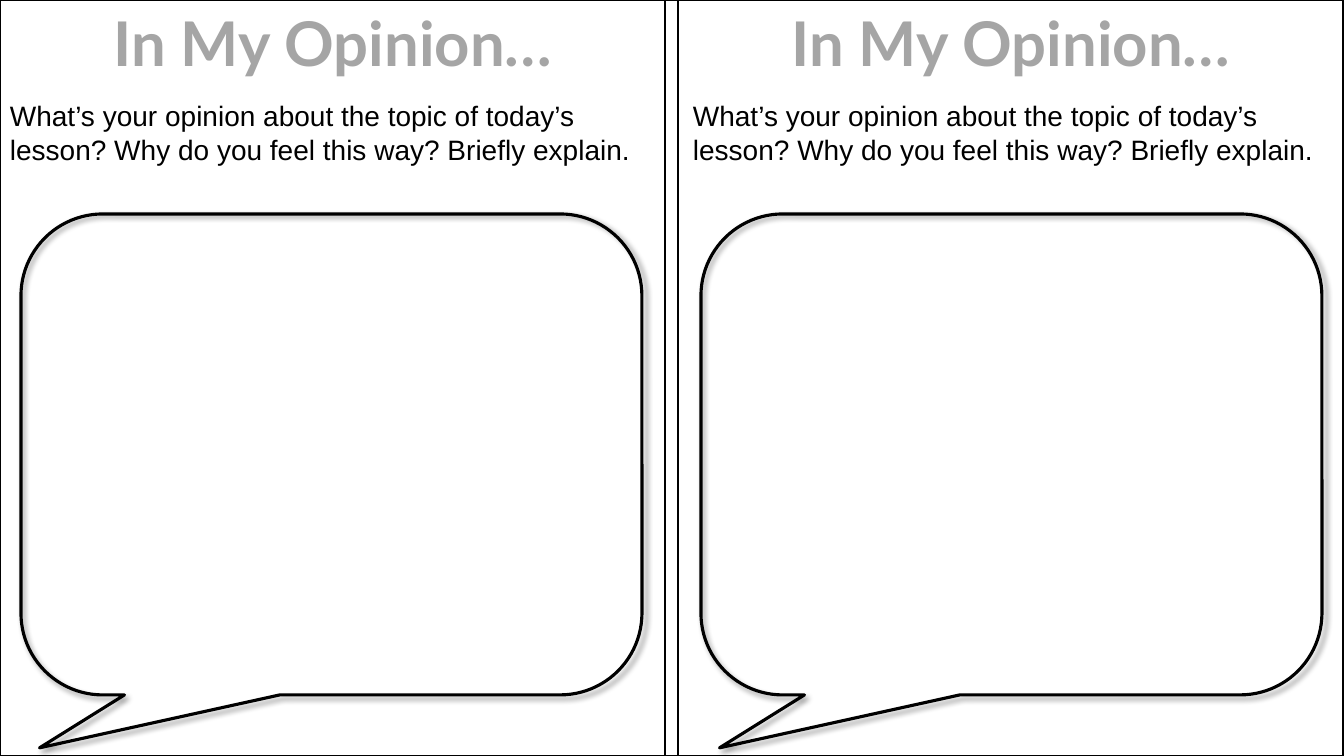
import pptx
import pptx.dml.color
import pptx.enum.shapes
import pptx.enum.text
import pptx.oxml
import pptx.oxml.ns
import pptx.util
from dataclasses import dataclass

PX = 12192000 / 1344
SHAPES = pptx.enum.shapes.MSO_SHAPE


@dataclass(frozen=True)
class Theme:
    ink: str = "000000"
    heading: str = "A5A5A5"
    heading_font: str = "Lato"
    prompt_font: str = "Arial"
    heading_size: int = 44
    prompt_size: int = 20
    frame_line: float = 1
    bubble_line: float = 2.25


theme = Theme()


def box(*lengths):
    return [round(length * PX) for length in lengths]


def outlined(kind, area, weight):
    outline = slide.shapes.add_shape(kind, *box(*area))
    outline.shadow.inherit = False
    outline.fill.background()
    outline.line.color.rgb = pptx.dml.color.RGBColor.from_string(theme.ink)
    outline.line.width = pptx.util.Pt(weight)
    return outline


deck = pptx.Presentation()
deck.slide_width, deck.slide_height = box(1344, 756)
slide = deck.slides.add_slide(deck.slide_layouts.get_by_name("Title Only"))

# Page border and the frames of the two half-page cards
for frame in ((0, 0, 1344, 756), (0, 0, 665, 756), (678, 0, 665, 756)):
    outlined(SHAPES.RECTANGLE, frame, theme.frame_line)

# Card contents: left edges of heading, prompt and speech bubble
for card, (heading_left, prompt_left, bubble_left) in enumerate(((73, 0, 21), (751, 683, 701))):
    # Heading: the first card holds the slide title
    heading_area = box(heading_left, 0, 520, 85)
    if card == 0:
        heading = slide.shapes.title
        heading.left, heading.top, heading.width, heading.height = heading_area
    else:
        heading = slide.shapes.add_textbox(*heading_area)
    prompt = slide.shapes.add_textbox(*box(prompt_left, 94, 656, 112))

    for part, wording, font_name, size, color, wrap, align in (
        (heading, "In My Opinion…", theme.heading_font, theme.heading_size,
         theme.heading, False, pptx.enum.text.PP_ALIGN.CENTER),
        (prompt, "What’s your opinion about the topic of today’s lesson? "
         "Why do you feel this way? Briefly explain.", theme.prompt_font,
         theme.prompt_size, theme.ink, True, pptx.enum.text.PP_ALIGN.LEFT),
    ):
        frame = part.text_frame
        frame.text = wording
        frame.word_wrap = wrap
        frame.auto_size = pptx.enum.text.MSO_AUTO_SIZE.SHAPE_TO_FIT_TEXT
        frame.vertical_anchor = pptx.enum.text.MSO_ANCHOR.TOP
        paragraph = frame.paragraphs[0]
        paragraph.alignment = align
        paragraph.line_spacing = 1.0
        paragraph.font.name = font_name
        paragraph.font.size = pptx.util.Pt(size)
        paragraph.font.bold = part is heading
        paragraph.font.color.rgb = pptx.dml.color.RGBColor.from_string(color)

    # Speech bubble with a soft shadow to the lower right
    bubble = outlined(SHAPES.ROUNDED_RECTANGULAR_CALLOUT,
                      (bubble_left, 214, 621, 481), theme.bubble_line)
    for index, value in enumerate((-0.47, 0.61, 0.17)):
        bubble.adjustments[index] = value
    effects = bubble._element.spPr.find(pptx.oxml.ns.qn("a:effectLst"))
    effects.append(pptx.oxml.parse_xml(
        f'<a:outerShdw {pptx.oxml.ns.nsdecls("a")} blurRad="{pptx.util.Pt(4)}" '
        f'dist="{pptx.util.Pt(3)}" dir="2700000" algn="tl" rotWithShape="0">'
        f'<a:srgbClr val="{theme.ink}"><a:alpha val="40000"/></a:srgbClr></a:outerShdw>'))

deck.save("out.pptx")
